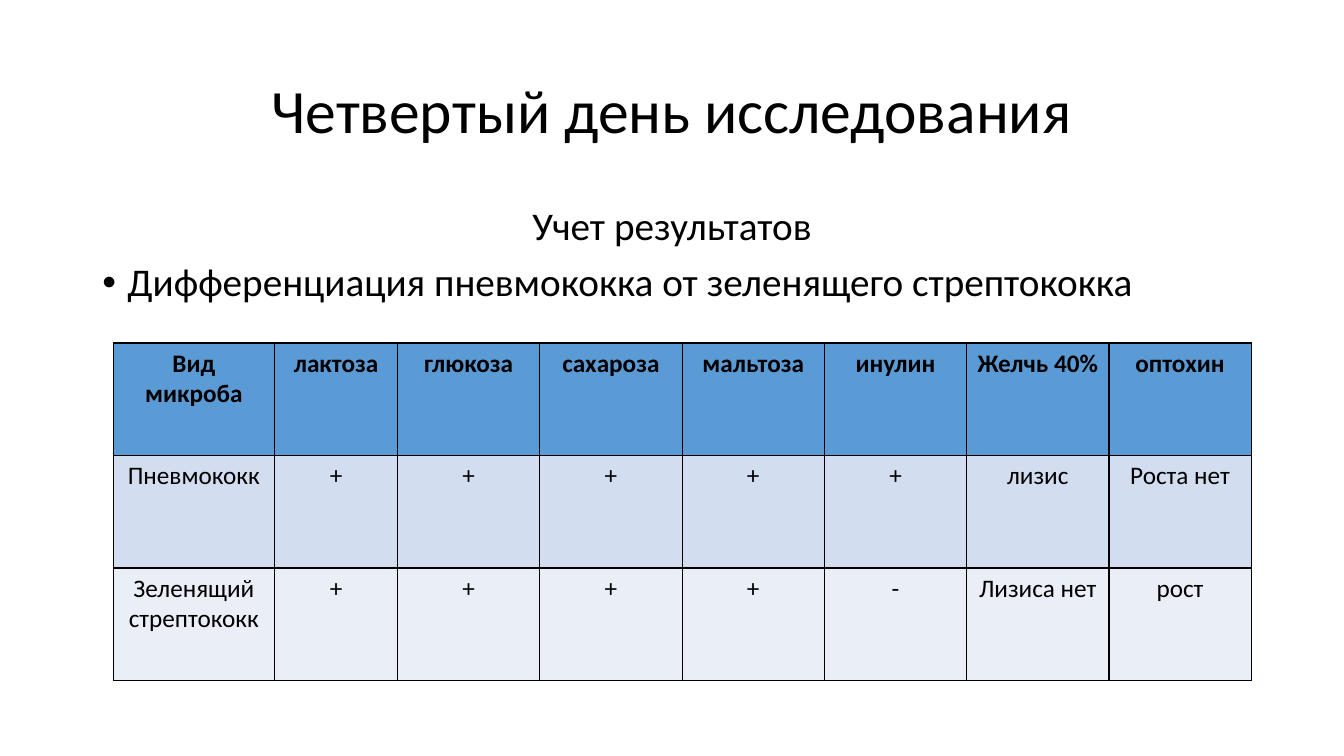
from lxml.etree import SubElement
from pptx import Presentation
from pptx.dml.color import RGBColor
from pptx.enum.text import MSO_ANCHOR, PP_ALIGN
from pptx.oxml.ns import qn
from pptx.util import Pt

TITLE = "Четвертый день исследования"
SUBTITLE = "Учет результатов"
TOPIC = "Дифференциация пневмококка от зеленящего стрептококка"
ROWS = [
    ["Вид микроба", "лактоза", "глюкоза", "сахароза", "мальтоза", "инулин", "Желчь 40%", "оптохин"],
    ["Пневмококк", "+", "+", "+", "+", "+", "лизис", "Роста нет"],
    ["Зеленящий стрептококк", "+", "+", "+", "+", "-", "Лизиса нет", "рост"],
]

FONT = "Calibri"
BLACK = RGBColor(0x00, 0x00, 0x00)
ROW_FILLS = [RGBColor(0x5B, 0x9B, 0xD5), RGBColor(0xD2, 0xDE, 0xEF), RGBColor(0xEA, 0xEF, 0xF7)]

LEFT, WIDTH = 66, 828
TABLE_LEFT, TABLE_TOP = 80.8, 245
COLUMN_WIDTHS = [115.4, 87.8] + [101.65] * 6
ROW_HEIGHT = 80.4
BULLET_INDENT = 18


def style(para, size, align=PP_ALIGN.CENTER, bold=False):
    para.alignment = align
    para.font.name = FONT
    para.font.size = Pt(size)
    para.font.bold = bold
    para.font.color.rgb = BLACK


def add_bullet(para):
    properties = para._p.get_or_add_pPr()
    properties.set("marL", str(Pt(BULLET_INDENT)))
    properties.set("indent", str(-Pt(BULLET_INDENT)))
    SubElement(properties, qn("a:buFont"), typeface="Arial")
    SubElement(properties, qn("a:buChar"), char="•")


def add_borders(cell):
    """Draw the four cell edges; call before the fill is set."""
    properties = cell._tc.get_or_add_tcPr()
    for edge in ("a:lnL", "a:lnR", "a:lnT", "a:lnB"):
        line = SubElement(properties, qn(edge), w=str(Pt(1)))
        fill = SubElement(line, qn("a:solidFill"))
        SubElement(fill, qn("a:srgbClr"), val=str(BLACK))


deck = Presentation()
deck.slide_width, deck.slide_height = Pt(960), Pt(540)
page = deck.slides.add_slide(deck.slide_layouts[5])

title = page.shapes.title
title.left, title.top, title.width, title.height = Pt(LEFT), Pt(28.8), Pt(WIDTH), Pt(104.4)
title.text_frame.text = TITLE
title.text_frame.vertical_anchor = MSO_ANCHOR.MIDDLE
heading = title.text_frame.paragraphs[0]
heading.line_spacing = 0.9
style(heading, 44)

body = page.shapes.add_textbox(Pt(LEFT), Pt(144), Pt(WIDTH), Pt(90)).text_frame
body.word_wrap = True
subtitle = body.paragraphs[0]
subtitle.text = SUBTITLE
subtitle.line_spacing = 0.9
style(subtitle, 28)
topic = body.add_paragraph()
topic.text = TOPIC
topic.line_spacing = 0.9
topic.space_before = Pt(10)
add_bullet(topic)
style(topic, 28, PP_ALIGN.LEFT)

table = page.shapes.add_table(
    len(ROWS), len(COLUMN_WIDTHS), Pt(TABLE_LEFT), Pt(TABLE_TOP),
    Pt(sum(COLUMN_WIDTHS)), Pt(ROW_HEIGHT * len(ROWS))).table
for column, width in zip(table.columns, COLUMN_WIDTHS):
    column.width = Pt(width)
for row_index, (labels, fill) in enumerate(zip(ROWS, ROW_FILLS)):
    table.rows[row_index].height = Pt(ROW_HEIGHT)
    for column_index, label in enumerate(labels):
        cell = table.cell(row_index, column_index)
        cell.text = label
        cell.margin_left = cell.margin_right = Pt(6)
        add_borders(cell)
        cell.fill.solid()
        cell.fill.fore_color.rgb = fill
        style(cell.text_frame.paragraphs[0], 18, bold=row_index == 0)

deck.save("out.pptx")
